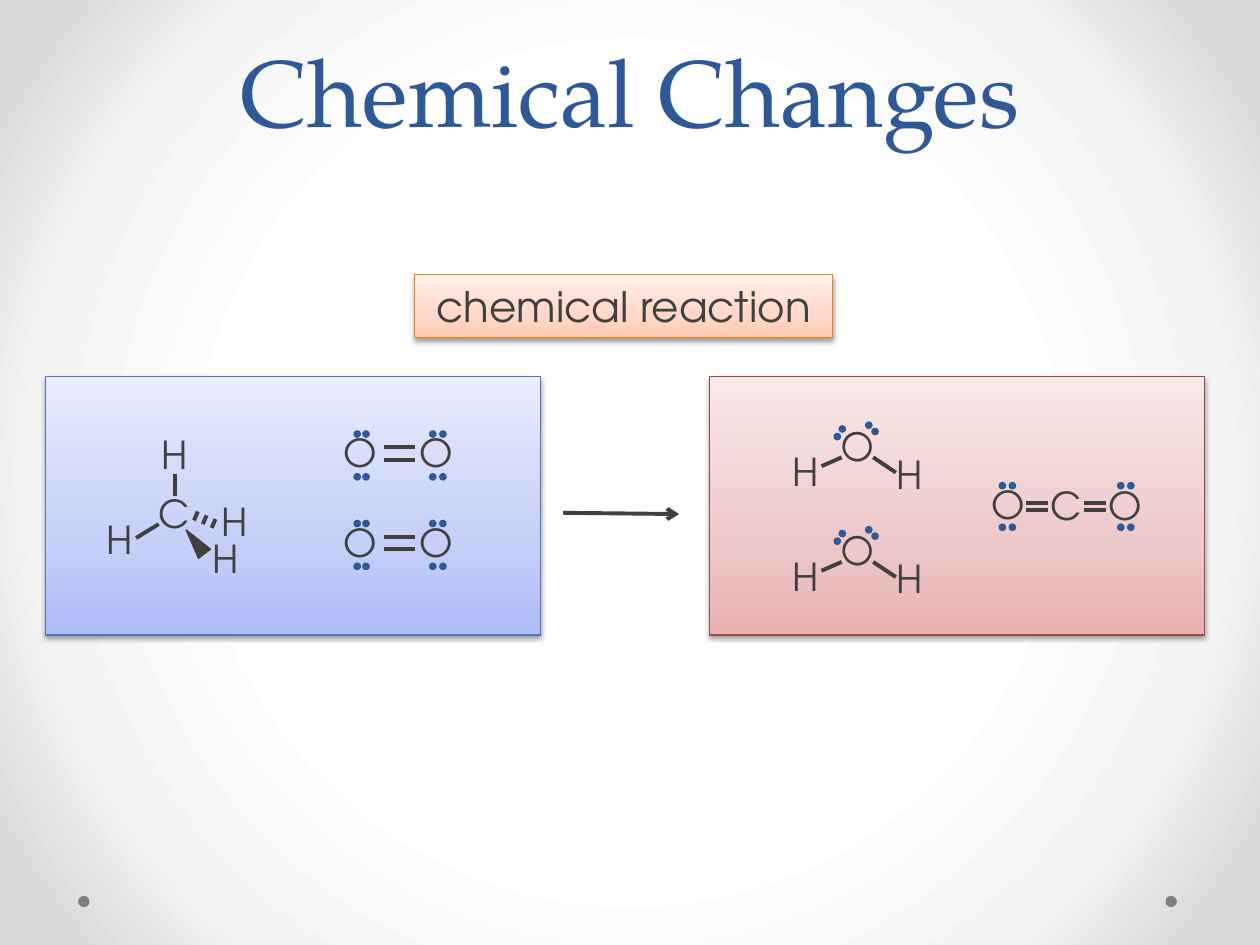
from lxml import etree
from pptx import Presentation
from pptx import util as u
from pptx.dml.color import RGBColor
from pptx.enum import shapes, text
from pptx.oxml import parse_xml
from pptx.oxml.ns import nsdecls, qn

BLUE = RGBColor(0x2F, 0x58, 0x97)
DARK = RGBColor(0x40, 0x40, 0x40)
GREY = RGBColor(0x80, 0x80, 0x80)
RED_EDGE = RGBColor(0x9A, 0x4E, 0x4E)
BLUE_EDGE = RGBColor(0x5C, 0x72, 0xB2)
ORANGE_EDGE = RGBColor(0xE6, 0x81, 0x1C)
RED_FADE = [RGBColor(0xE8, 0xB0, 0xB0), RGBColor(0xED, 0xC8, 0xC8), RGBColor(0xF9, 0xE9, 0xE9)]
BLUE_FADE = [RGBColor(0xAD, 0xBB, 0xF6), RGBColor(0xC5, 0xCF, 0xF8), RGBColor(0xE8, 0xEC, 0xFD)]
ORANGE_FADE = [RGBColor(0xFF, 0xC9, 0xB1), RGBColor(0xFF, 0xD8, 0xC8), RGBColor(0xFF, 0xF0, 0xEA)]
PAGE_FADE = [RGBColor(0xFF, 0xFF, 0xFF), RGBColor(0xF4, 0xF4, 0xF4), RGBColor(0xDA, 0xDA, 0xDA)]
SANS = "TeX Gyre Adventor"
SERIF = "TeX Gyre Pagella"


def write(box, words, size, font, colour, align):
    box.text_frame.word_wrap = True
    para = box.text_frame.paragraphs[0]
    para.text = words
    para.alignment = align
    para.font.size = u.Pt(size)
    para.font.name = font
    para.font.color.rgb = colour
    return para


def gradient(colours, places, direction):
    stops = "".join(
        f'<a:gs pos="{place * 1000}"><a:srgbClr val="{colour}"/></a:gs>'
        for colour, place in zip(colours, places)
    )
    return parse_xml(
        f'<a:gradFill {nsdecls("a")} rotWithShape="1"><a:gsLst>{stops}</a:gsLst>{direction}</a:gradFill>'
    )


deck = Presentation()
deck.slide_width, deck.slide_height = u.Inches(10), u.Inches(7.5)
page = deck.slides.add_slide(deck.slide_layouts[6])

page.background.fill.solid()
page.background.fill.fore_color.rgb = PAGE_FADE[0]
solid = page.element.find(".//" + qn("p:bgPr")).find(qn("a:solidFill"))
solid.getparent().replace(solid, gradient(
    PAGE_FADE, (50, 76, 92),
    '<a:path path="circle"><a:fillToRect l="50000" t="50000" r="50000" b="50000"/></a:path>',
))

title = page.shapes.add_textbox(u.Inches(0.5), u.Inches(0), u.Inches(9), u.Inches(1.21))
title.text_frame.vertical_anchor = text.MSO_ANCHOR.BOTTOM
write(title, "Chemical Changes", 54, SERIF, BLUE, text.PP_ALIGN.CENTER).line_spacing = u.Pt(58)

products = page.shapes.add_group_shape().shapes
reactants = page.shapes.add_group_shape().shapes

panels = []
for host, left, top, width, height, fade, edge in [
    (products, 5.63, 2.99, 3.93, 2.05, RED_FADE, RED_EDGE),
    (reactants, 0.36, 2.99, 3.93, 2.05, BLUE_FADE, BLUE_EDGE),
    (page.shapes, 3.29, 2.18, 3.32, 0.5, ORANGE_FADE, ORANGE_EDGE),
]:
    panel = host.add_shape(shapes.MSO_SHAPE.RECTANGLE, u.Inches(left), u.Inches(top),
                           u.Inches(width), u.Inches(height))
    panel.fill.solid()
    panel.line.color.rgb = edge
    panel.line.width = u.Pt(0.75)
    panel.shadow.inherit = False
    props = panel.element.spPr
    props.replace(props.find(qn("a:solidFill")), gradient(
        fade, (0, 35, 100), '<a:lin ang="16200000" scaled="0"/>'))
    props.find(qn("a:effectLst")).append(parse_xml(
        f'<a:outerShdw {nsdecls("a")} blurRad="40000" dist="20000" dir="5400000" rotWithShape="0">'
        '<a:srgbClr val="000000"><a:alpha val="38000"/></a:srgbClr></a:outerShdw>'))
    panels.append(panel)
write(panels[-1], "chemical reaction", 24, SANS, DARK, text.PP_ALIGN.CENTER)

letters = [
    (reactants, "C", 1.16, 3.84, 0.45, 0),
    (reactants, "H", 1.59, 4.2, 0.41, 0),
    (reactants, "H", 0.75, 4.05, 0.41, 0),
    (reactants, "H", 1.18, 3.37, 0.45, 0),
    (reactants, "H", 1.66, 3.9, 0.45, 0),
    (products, "C", 8.24, 3.78, 0.45, 0),
    (products, "O", 7.77, 3.77, 0.47, 0),
    (products, "O", 8.7, 3.78, 0.47, 0),
]
bonds = [
    (reactants, 1.26, 4.16, 1.08, 4.27),
    (reactants, 1.39, 3.76, 1.39, 3.94),
    (page.shapes, 4.47, 4.07, 5.39, 4.08),
]
dots = []

for step in range(3):
    bonds.append((reactants, 1.54 + 0.07 * step, 4.13 + 0.03 * step,
                  1.57 + 0.07 * step, 4.06 + 0.03 * step))

for drop in (0, 0.83):
    letters += [
        (products, "O", 6.58, 3.32 + drop, 0.45, 245.5),
        (products, "H", 7.02, 3.53 + drop, 0.41, 0),
        (products, "H", 6.19, 3.51 + drop, 0.45, 0),
    ]
    bonds += [
        (products, 6.93, 3.63 + drop, 7.11, 3.75 + drop),
        (products, 6.52, 3.7 + drop, 6.68, 3.63 + drop),
    ]
    for x, y in [(6.66, 3.38), (6.62, 3.44), (6.87, 3.35), (6.92, 3.4)]:
        dots.append((products, x, y + drop))

for drop in (0, 0.71):
    letters.append((reactants, "O\tO", 2.63, 3.36 + drop, 1.08, 0))
    for y in (3.55, 3.65):
        bonds.append((reactants, 3.05, y + drop, 3.29, y + drop))
    for x in (2.81, 2.88, 3.41, 3.49):
        for y in (3.42, 3.76):
            dots.append((reactants, x, y + drop))

for y in (3.99, 4.05):
    for x in (8.14, 8.6):
        bonds.append((products, x, y, x + 0.18, y))
for x in (7.93, 8.01, 8.87, 8.95):
    for y in (3.83, 4.16):
        dots.append((products, x, y))

for host, letter, x, y, width, turn in letters:
    box = host.add_textbox(u.Inches(x), u.Inches(y), u.Inches(width), u.Inches(0.47))
    box.rotation = turn
    para = write(box, letter, 22, SANS, DARK, text.PP_ALIGN.LEFT)
    if "\t" in letter:
        para._p.get_or_add_pPr().insert(0, parse_xml(
            f'<a:tabLst {nsdecls("a")}><a:tab pos="{u.Inches(0.6)}" algn="l"/></a:tabLst>'))

for host, x1, y1, x2, y2 in bonds:
    bond = host.add_connector(shapes.MSO_CONNECTOR.STRAIGHT, u.Inches(x1), u.Inches(y1),
                              u.Inches(x2), u.Inches(y2))
    bond.line.color.rgb = DARK
    bond.line.width = u.Pt(2.25)
    if host is page.shapes:
        etree.SubElement(bond.line._get_or_add_ln(), qn("a:tailEnd"), type="arrow")
    etree.SubElement(bond.element.spPr, qn("a:effectLst"))

for host, x, y in dots:
    dot = host.add_shape(shapes.MSO_SHAPE.OVAL, u.Inches(x), u.Inches(y), u.Inches(0.05), u.Inches(0.05))
    dot.shadow.inherit = False
    dot.fill.solid()
    dot.fill.fore_color.rgb = dot.line.color.rgb = BLUE
    dot.line.width = u.Pt(0.75)

wedge = reactants.add_shape(shapes.MSO_SHAPE.ISOSCELES_TRIANGLE, u.Inches(1.49), u.Inches(4.18),
                            u.Inches(0.12), u.Inches(0.24))
wedge.rotation = 322.4
wedge.shadow.inherit = False
wedge.fill.solid()
wedge.fill.fore_color.rgb = wedge.line.color.rgb = DARK
wedge.line.width = u.Pt(0.75)

for x in (0.62, 9.25):
    corner = page.shapes.add_shape(shapes.MSO_SHAPE.OVAL, u.Inches(x), u.Inches(7.11),
                                   u.Inches(0.09), u.Inches(0.09))
    corner.shadow.inherit = False
    corner.fill.solid()
    corner.fill.fore_color.rgb = GREY
    corner.line.fill.background()

deck.save("out.pptx")
